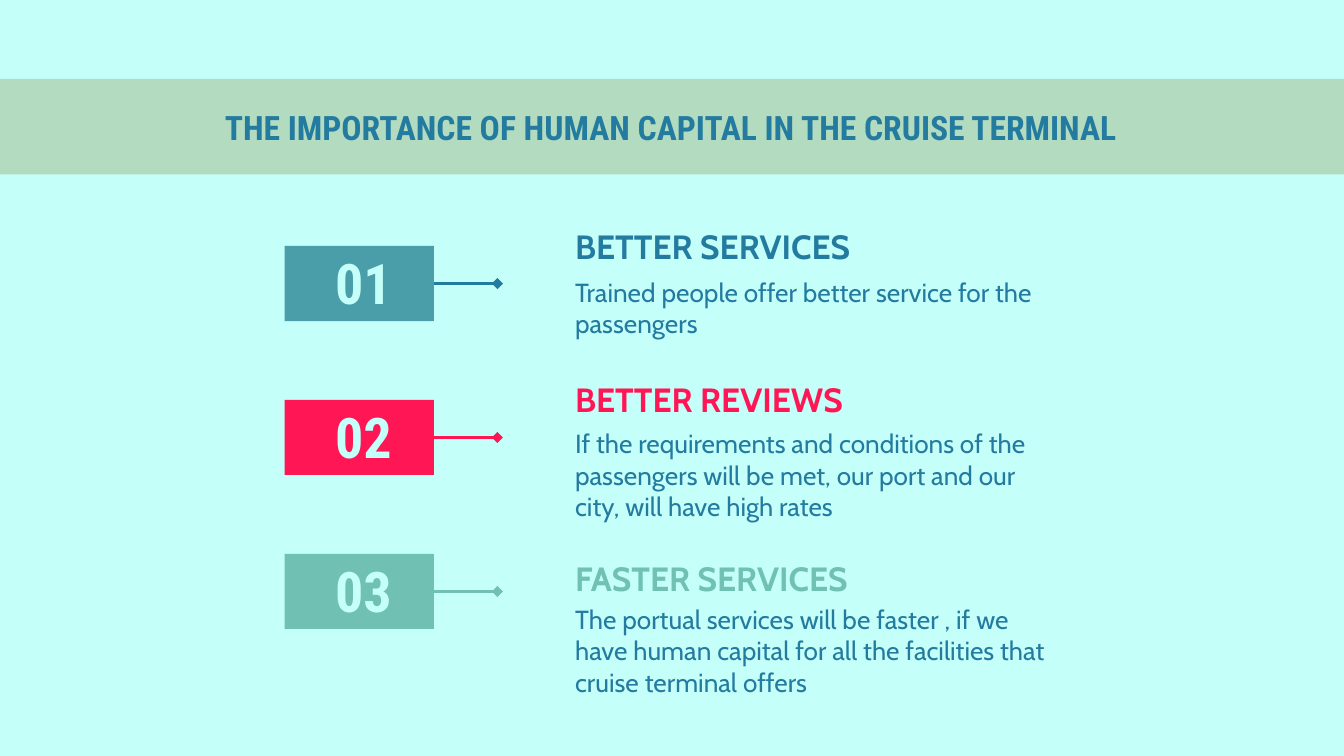
"""Build a slide on the importance of human capital in the cruise terminal."""
from dataclasses import dataclass

from lxml.etree import SubElement
from pptx import Presentation
from pptx.dml.color import RGBColor
from pptx.enum.shapes import MSO_CONNECTOR, MSO_SHAPE
from pptx.enum.text import MSO_ANCHOR, PP_ALIGN
from pptx.oxml.ns import qn
from pptx.util import Cm, Pt


@dataclass(frozen=True)
class Theme:
    back: str = "C4FFF9"
    band: str = "B2DBBF"
    ink: str = "247BA0"
    teal: str = "4A9EAA"
    pink: str = "FF1654"
    mint: str = "70C1B3"
    title: str = "Roboto Condensed"
    body: str = "Cabin"
    large: int = 30
    head: int = 18
    small: int = 14


theme = Theme()
deck = Presentation()
deck.slide_width, deck.slide_height = Cm(25.4), Cm(14.29)
slide = deck.slides.add_slide(deck.slide_layouts[6])
slide.background.fill.solid()
slide.background.fill.fore_color.rgb = RGBColor.from_string(theme.back)


def add_block(left, top, width, height, color):
    block = slide.shapes.add_shape(
        MSO_SHAPE.RECTANGLE, Cm(left), Cm(top), Cm(width), Cm(height))
    block.shadow.inherit = False
    block.fill.solid()
    block.fill.fore_color.rgb = RGBColor.from_string(color)
    block.line.fill.background()


def add_text(text, left, top, width, height, face, size, color,
             bold=True, align=PP_ALIGN.LEFT):
    box = slide.shapes.add_textbox(Cm(left), Cm(top), Cm(width), Cm(height))
    frame = box.text_frame
    frame.word_wrap = True
    frame.vertical_anchor = MSO_ANCHOR.MIDDLE
    frame.margin_left = frame.margin_right = Cm(0.25)
    frame.margin_top = frame.margin_bottom = Cm(0.25)
    frame.text = text
    frame.paragraphs[0].alignment = align
    font = frame.paragraphs[0].runs[0].font
    font.name, font.size, font.bold = face, Pt(size), bold
    font.color.rgb = RGBColor.from_string(color)


add_block(0, 1.49, 25.4, 1.81, theme.band)
add_text("THE IMPORTANCE OF HUMAN CAPITAL IN THE CRUISE TERMINAL",
         1.83, 1.49, 21.7, 1.81, theme.title, theme.head, theme.ink,
         align=PP_ALIGN.CENTER)

items = [
    ("BETTER SERVICES", "Trained people offer better service for the passengers",
     theme.teal, theme.ink, 4.22, 5.11, 1.42),
    ("BETTER REVIEWS",
     "If the requirements and conditions of the passengers will be met, "
     "our port and our city, will have high rates",
     theme.pink, theme.pink, 7.12, 8, 1.95),
    ("FASTER SERVICES",
     "The portual services will be faster , if we have human capital "
     "for all the facilities that cruise terminal offers",
     theme.mint, theme.mint, 10.49, 11.33, 1.93),
]

for row, (head, body, fill, tint, head_top, body_top, tall) in enumerate(items):
    top = 4.65 + row * 2.91
    add_block(5.38, top, 2.82, 1.42, fill)
    add_text(f"{row + 1:02}", 5.82, top, 2.1, 1.37, theme.title, theme.large,
             theme.back, align=PP_ALIGN.CENTER)

    mid = Cm(top + 0.71)
    link = slide.shapes.add_connector(
        MSO_CONNECTOR.STRAIGHT, Cm(9.4), mid, Cm(8.2), mid)
    link.line.width = Pt(1.5)
    link.line.color.rgb = RGBColor.from_string(tint)
    SubElement(link.line._get_or_add_ln(), qn("a:headEnd"), type="diamond")
    SubElement(link._element.spPr, qn("a:effectLst"))

    add_text(head, 10.62, head_top, 9.4, 0.86, theme.body, theme.head, tint)
    add_text(body, 10.62, body_top, 9.4, tall, theme.body, theme.small,
             theme.ink, bold=False)

deck.save("out.pptx")
